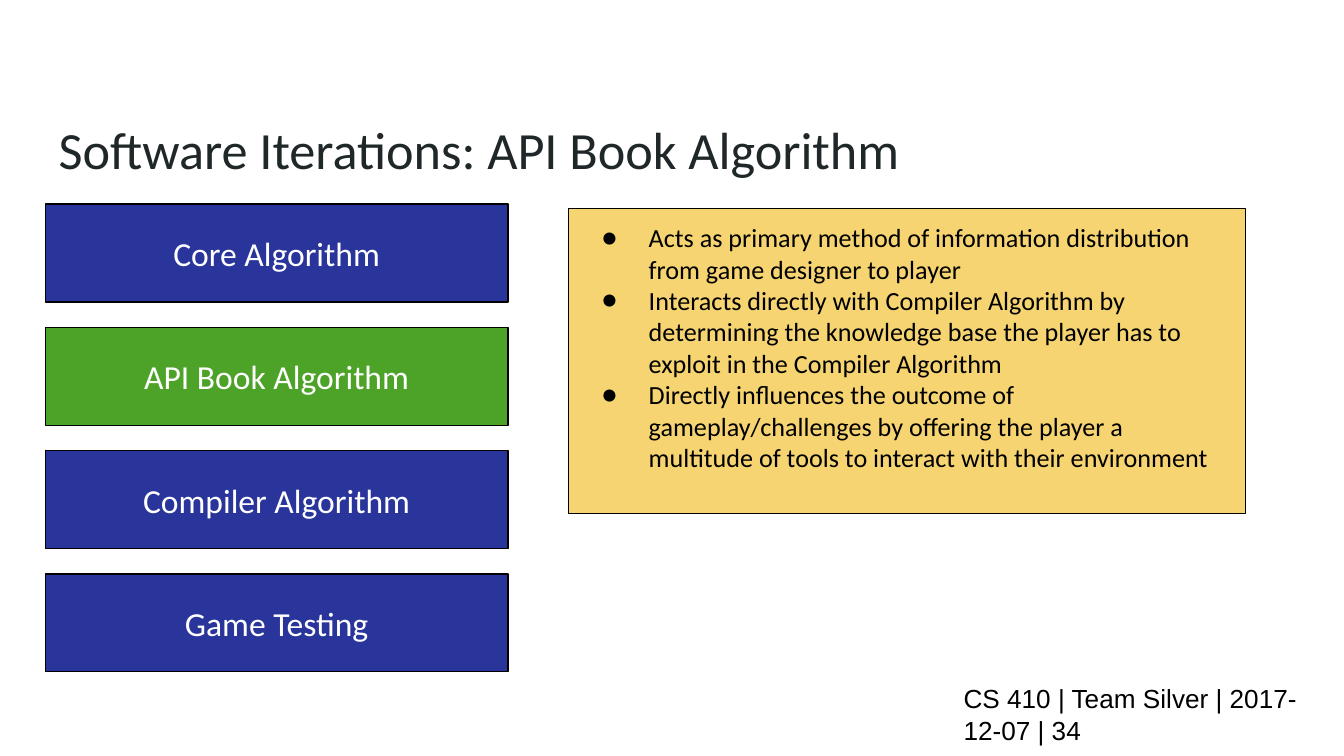
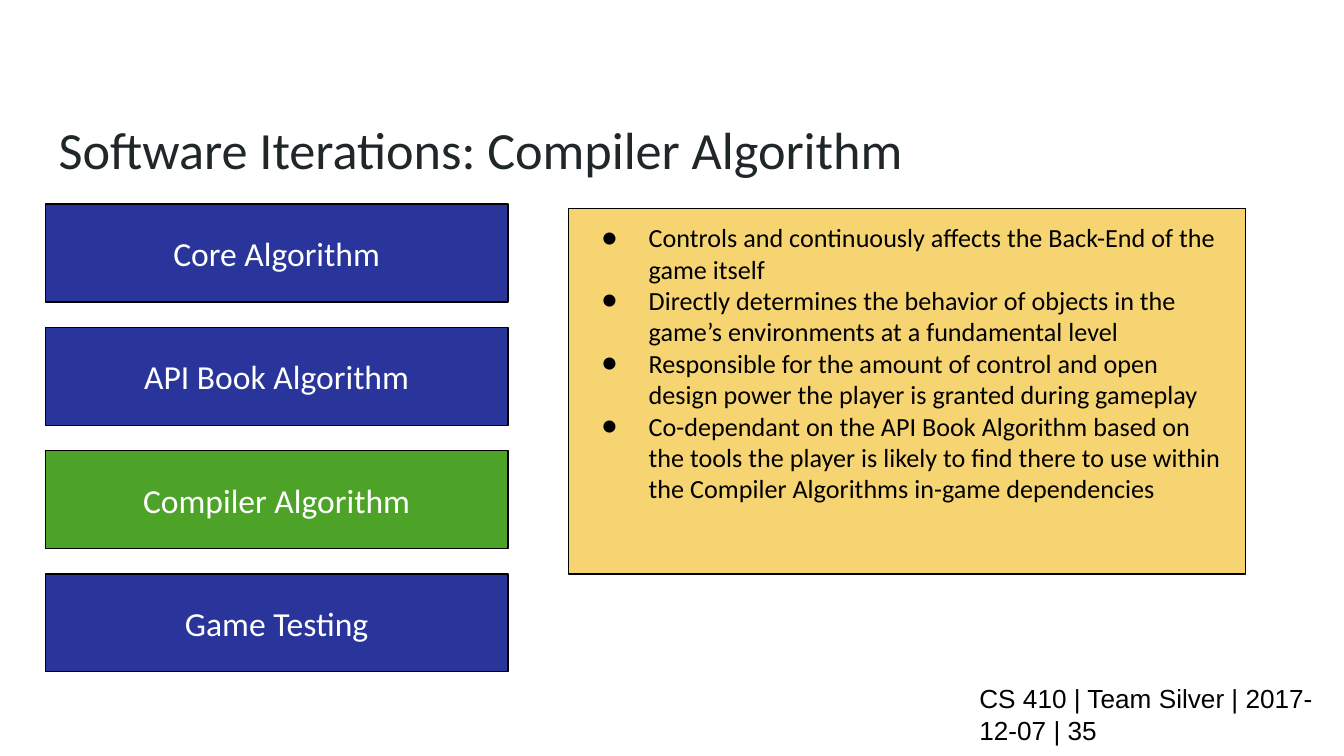
from dataclasses import dataclass

from lxml import etree
from pptx import Presentation
from pptx.dml.color import RGBColor
from pptx.enum.shapes import MSO_SHAPE
from pptx.enum.text import MSO_ANCHOR, MSO_AUTO_SIZE, PP_ALIGN
from pptx.oxml.ns import qn
from pptx.util import Cm, Pt

RECT = MSO_SHAPE.RECTANGLE
TOP, MIDDLE, BOTTOM = MSO_ANCHOR.TOP, MSO_ANCHOR.MIDDLE, MSO_ANCHOR.BOTTOM
LEFT, CENTER = PP_ALIGN.LEFT, PP_ALIGN.CENTER
NO_FIT = MSO_AUTO_SIZE.NONE


# Colours, fonts and sizes
@dataclass(frozen=True)
class Theme:
    title: str = "202729"
    step: str = "29359B"
    active: str = "4DA328"
    panel: str = "F1C232"
    panel_alpha: int = 69
    ink: str = "000000"
    light: str = "FFFFFF"
    font: str = "Calibri"
    foot_font: str = "Arial"
    title_size: int = 28
    step_size: int = 18
    text_size: int = 14
    line: float = 0.75


STEPS = ["Core Algorithm", "API Book Algorithm", "Compiler Algorithm", "Game Testing"]
EDGE = 0.86         # left edge of title and steps
FIRST, PITCH = 3.86, 2.33
FOOT_END = 25.07    # right edge of the footer

# Active step, panel height, footer left, page, points
PAGES = [
    ("API Book Algorithm", 5.77, 17.96, 34, [
        "Acts as primary method of information distribution from game designer to player",
        "Interacts directly with Compiler Algorithm by determining the knowledge base "
        "the player has to exploit in the Compiler Algorithm",
        "Directly influences the outcome of gameplay/challenges by offering the player "
        "a multitude of tools to interact with their environment",
    ]),
    ("Compiler Algorithm", 6.91, 18.26, 35, [
        "Controls and continuously affects the Back-End of the game itself",
        "Directly determines the behavior of objects in the game’s environments "
        "at a fundamental level",
        "Responsible for the amount of control and open design power the player "
        "is granted during gameplay",
        "Co-dependant on the API Book Algorithm based on the tools the player is likely "
        "to find there to use within the Compiler Algorithms in-game dependencies",
    ]),
]


class Deck:
    def __init__(self, theme):
        self.theme = theme
        self.prs = Presentation()
        self.prs.slide_width, self.prs.slide_height = Cm(25.4), Cm(14.29)
        self.slide = None

    def add_page(self):
        self.slide = self.prs.slides.add_slide(self.prs.slide_layouts[1])

    # Shared helpers
    def place(self, shape, left, top, width, height):
        shape.left, shape.top = Cm(left), Cm(top)
        shape.width, shape.height = Cm(width), Cm(height)

    def label(self, shape, lines, size, color, anchor, align=LEFT, font=None):
        frame = shape.text_frame
        frame.text = "\n".join(lines)
        frame.word_wrap, frame.auto_size = True, NO_FIT
        frame.vertical_anchor = anchor
        frame.margin_left = frame.margin_right = Cm(0.25)
        frame.margin_top = frame.margin_bottom = Cm(0.25)
        for para in frame.paragraphs:
            para.alignment = align
            para.space_before = para.space_after = Pt(0)
            para.line_spacing = 1.0
            for run in para.runs:
                run.font.name = font or self.theme.font
                run.font.size = Pt(size)
                run.font.color.rgb = RGBColor.from_string(color)

    def paint(self, shape, color):
        shape.fill.solid()
        shape.fill.fore_color.rgb = RGBColor.from_string(color)
        shape.line.color.rgb = RGBColor.from_string(self.theme.ink)
        shape.line.width = Pt(self.theme.line)

    # Elements
    def title(self, text):
        shape = self.slide.shapes.title
        self.place(shape, EDGE, 1.55, 18.39, 2.11)
        self.label(shape, [text], self.theme.title_size, self.theme.title, BOTTOM)

    def footer(self, left, page):
        box = self.slide.shapes.add_textbox(
            Cm(left), Cm(12.95), Cm(FOOT_END - left), Cm(1.09))
        self.label(box, [f"CS 410 | Team Silver | 2017-12-07 | {page}"],
                   self.theme.text_size, self.theme.ink, MIDDLE,
                   font=self.theme.foot_font)

    def step(self, text, top, color):
        box = self.slide.shapes.add_shape(
            RECT, Cm(EDGE), Cm(top), Cm(8.74), Cm(1.85))
        box.shadow.inherit = False
        self.paint(box, color)
        self.label(box, [text], self.theme.step_size, self.theme.light, MIDDLE, CENTER)

    def panel(self, points, height):
        body = self.slide.placeholders[1]
        self.place(body, 10.74, 3.94, 12.8, height)
        self.paint(body, self.theme.panel)
        fill = body.element.spPr.find(qn("a:solidFill"))
        etree.SubElement(fill[0], qn("a:alpha"), val=str(self.theme.panel_alpha * 1000))
        self.label(body, points, self.theme.text_size, self.theme.ink, TOP)
        for para in body.text_frame.paragraphs:
            props = para._p.get_or_add_pPr()
            props.set("marL", str(Cm(1.27)))
            props.set("indent", str(-Cm(0.89)))
            etree.SubElement(props, qn("a:buFont"), typeface=self.theme.font)
            etree.SubElement(props, qn("a:buChar"), char="●")


def main():
    theme = Theme()
    deck = Deck(theme)
    for active, height, left, page, points in PAGES:
        deck.add_page()
        deck.title(f"Software Iterations: {active}")
        deck.footer(left, page)
        for i, name in enumerate(STEPS):
            color = theme.active if name == active else theme.step
            deck.step(name, FIRST + i * PITCH, color)
        deck.panel(points, height)
    deck.prs.save("out.pptx")


if __name__ == "__main__":
    main()
